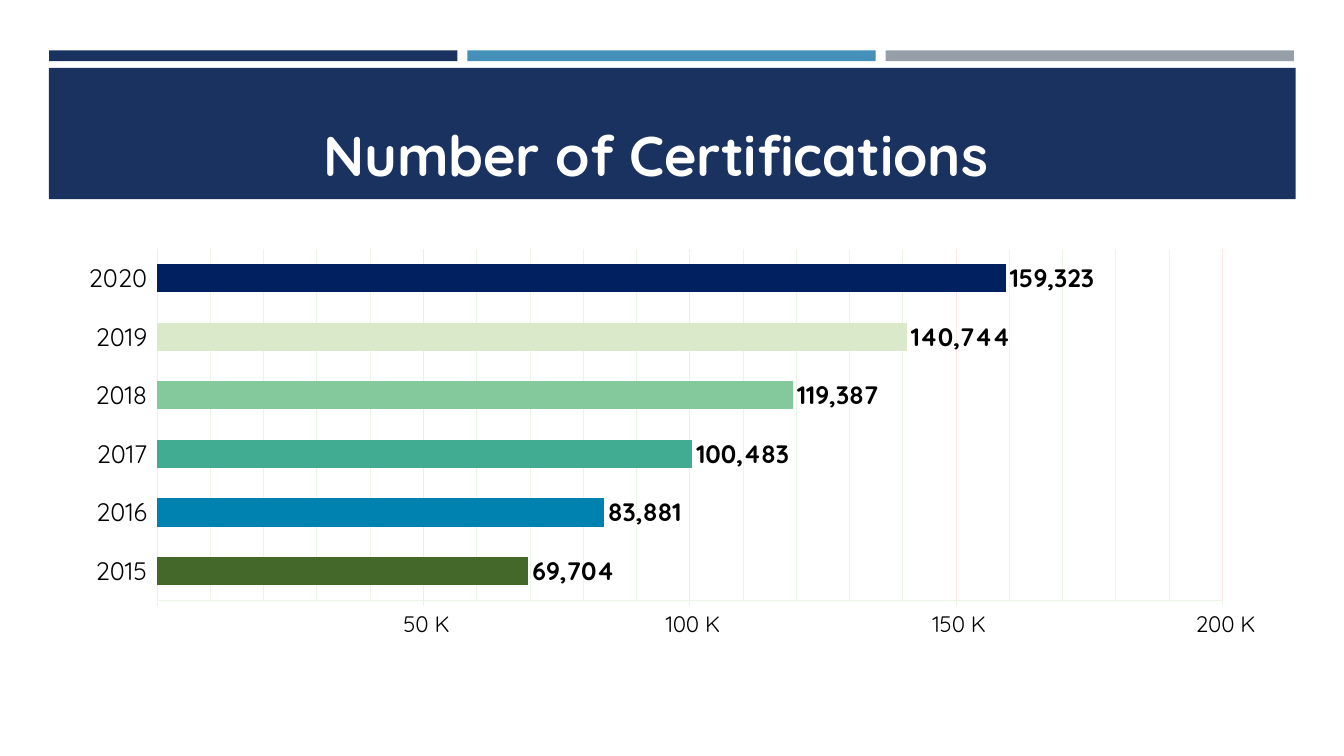
from copy import deepcopy

from lxml import etree
from pptx import Presentation
from pptx.chart.data import CategoryChartData
from pptx.dml.color import RGBColor
from pptx.enum.chart import XL_CHART_TYPE, XL_LABEL_POSITION, XL_TICK_MARK
from pptx.enum.shapes import MSO_SHAPE
from pptx.enum.text import MSO_ANCHOR, MSO_AUTO_SIZE, PP_ALIGN
from pptx.oxml.ns import qn
from pptx.util import Cm, Pt

BAR_CLUSTERED = XL_CHART_TYPE.BAR_CLUSTERED
OUTSIDE_END = XL_LABEL_POSITION.OUTSIDE_END
TICK_OUTSIDE = XL_TICK_MARK.OUTSIDE
TICK_NONE = XL_TICK_MARK.NONE
RECTANGLE = MSO_SHAPE.RECTANGLE
MIDDLE = MSO_ANCHOR.MIDDLE
NO_AUTOFIT = MSO_AUTO_SIZE.NONE
CENTER = PP_ALIGN.CENTER

FONT = "Quicksand"
NAVY = "1A3260"
PALE_GREEN = "ECF4E4"


def color(value):
    return RGBColor.from_string(value)


def style_font(font, size, value, bold=False):
    font.name = FONT
    font.size = Pt(size)
    font.bold = bold
    font.color.rgb = color(value)


presentation = Presentation()
presentation.slide_width = Cm(33.87)
presentation.slide_height = Cm(19.05)
slide = presentation.slides.add_slide(presentation.slide_layouts[5])

# Three accent strips above the title band
bands = [
    (1.24 + 10.54 * index, 1.27, 10.29, 0.27, fill)
    for index, fill in enumerate([NAVY, "4590B8", "969FA7"])
]
bands.append((1.23, 1.71, 31.42, 3.31, NAVY))
for left, top, width, height, fill in bands:
    shape = slide.shapes.add_shape(
        RECTANGLE, Cm(left), Cm(top), Cm(width), Cm(height))
    shape.shadow.inherit = False
    shape.fill.solid()
    shape.fill.fore_color.rgb = color(fill)
    shape.line.fill.background()

# Title, moved in front of the band
title = slide.shapes.title
title.left, title.top, title.width, title.height = (
    Cm(1.5), Cm(2.9), Cm(30.84), Cm(1.96))
slide.shapes._spTree.append(title._element)
title_frame = title.text_frame
title_frame.text = "Number of Certifications"
title_frame.word_wrap = True
title_frame.auto_size = NO_AUTOFIT
title_frame.vertical_anchor = MIDDLE
title_frame.margin_right = Cm(1.05)
title_paragraph = title_frame.paragraphs[0]
title_paragraph.alignment = CENTER
style_font(title_paragraph.font, 40, "FFFFFF", bold=True)

# Bar chart of certifications per year
certifications = {
    "2015": (69704, "43682A"),
    "2016": (83881, "0082B0"),
    "2017": (100483, "42AC93"),
    "2018": (119387, "84C99C"),
    "2019": (140744, "DAE9C9"),
    "2020": (159323, "002060"),
}
chart_data = CategoryChartData(number_format="#,##0")
chart_data.categories = list(certifications)
chart_data.add_series(
    "Series 1", [count for count, fill in certifications.values()])
chart_left, chart_top, chart_width, chart_height = 1.63, 6.07, 30.63, 10.21
chart = slide.shapes.add_chart(
    BAR_CLUSTERED, Cm(chart_left), Cm(chart_top),
    Cm(chart_width), Cm(chart_height), chart_data).chart
chart.has_title = False
chart.has_legend = False
style_font(chart.font, 10, "000000")

plot = chart.plots[0]
plot.gap_width = 108
plot.overlap = -34
plot.vary_by_categories = False
series = plot.series[0]
series.format.fill.solid()
series.format.fill.fore_color.rgb = color("7BA946")
for index, (count, fill) in enumerate(certifications.values()):
    point_fill = series.points[index].format.fill
    point_fill.solid()
    point_fill.fore_color.rgb = color(fill)

labels = series.data_labels
labels.show_value = True
labels.position = OUTSIDE_END
labels.number_format = "#,##0"
labels.number_format_is_linked = False
style_font(labels.font, 18, "000000", bold=True)

# Axes and major gridlines
year_axis = chart.category_axis
year_axis.major_tick_mark = TICK_OUTSIDE
year_axis.format.line.fill.background()
style_font(year_axis.tick_labels.font, 18, "000000")

count_axis = chart.value_axis
count_axis.minimum_scale = 0
count_axis.maximum_scale = 200000
count_axis.major_unit = 50000
count_axis.minor_unit = 10000
count_axis.major_tick_mark = TICK_OUTSIDE
count_axis.minor_tick_mark = TICK_NONE
count_axis.has_major_gridlines = True
count_axis.has_minor_gridlines = True
count_axis.tick_labels.number_format = r'[>=10000]\ #,###,\ "K";'
count_axis.tick_labels.number_format_is_linked = False
style_font(count_axis.tick_labels.font, 16, "000000")
for part, line_color in [
    (count_axis, PALE_GREEN),
    (count_axis.major_gridlines, "FEE6E6"),
]:
    part.format.line.color.rgb = color(line_color)
    part.format.line.width = Pt(0.75)

# Minor gridlines share the axis line style
axis_element = count_axis._element
minor_gridlines = axis_element.find(qn("c:minorGridlines"))
minor_gridlines.append(deepcopy(axis_element.find(qn("c:spPr"))))

# Fixed inner plot area, as fractions of the chart frame
plot_area = chart._chartSpace.chart.plotArea
for old_layout in plot_area.findall(qn("c:layout")):
    plot_area.remove(old_layout)
layout = etree.Element(qn("c:layout"))
manual_layout = etree.SubElement(layout, qn("c:manualLayout"))
for name, value in [
    ("layoutTarget", "inner"),
    ("xMode", "edge"),
    ("yMode", "edge"),
    ("x", (3.96 - chart_left) / chart_width),
    ("y", (6.27 - chart_top) / chart_height),
    ("w", 26.85 / chart_width),
    ("h", 8.86 / chart_height),
]:
    etree.SubElement(manual_layout, qn(f"c:{name}")).set("val", str(value))
plot_area.insert(0, layout)

presentation.save("out.pptx")
